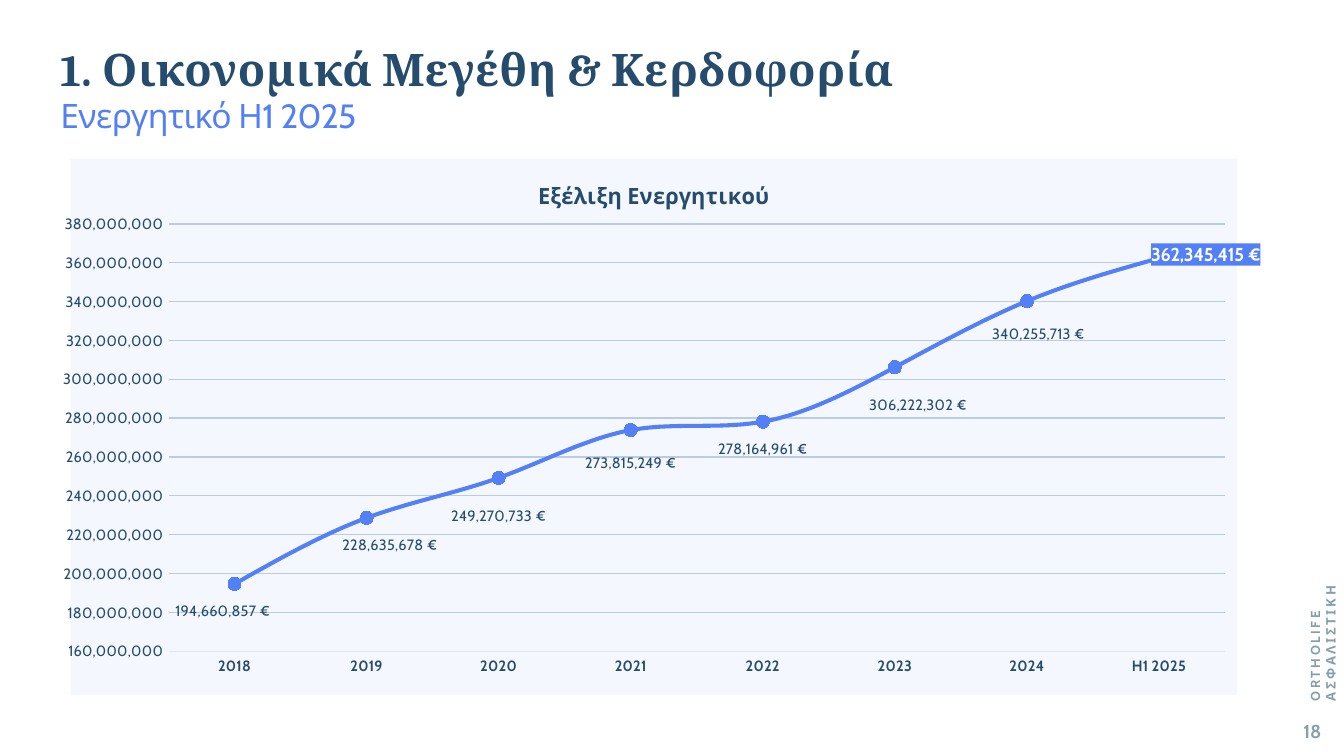
from pptx import Presentation
from pptx.chart.data import CategoryChartData
from pptx.dml.color import RGBColor
from pptx.enum.chart import XL_CHART_TYPE, XL_LABEL_POSITION, XL_MARKER_STYLE, XL_TICK_MARK
from pptx.enum.text import MSO_ANCHOR, MSO_AUTO_SIZE, PP_ALIGN
from pptx.oxml import parse_xml
from pptx.oxml.ns import nsdecls, qn
from pptx.util import Inches, Pt

COLORS = {
    "navy": "254C6D",
    "blue": "5480F7",
    "gray": "849EAA",
    "panel": "F4F7FE",
    "grid": "B9CCE4",
    "axis": "E0E7EA",
    "white": "FFFFFF",
}
BODY_FONT = "Cabin"
TITLE_FONT = "Cambria"
EURO_FORMAT = '#,##0\\ "€"'
ASSETS = {
    "2018": 194660857,
    "2019": 228635678,
    "2020": 249270733,
    "2021": 273815249,
    "2022": 278164961,
    "2023": 306222302,
    "2024": 340255713,
    "H1 2025": 362345415,
}
LABEL_OFFSETS = [
    (-0.01, 0.01), (0.02, 0.01), (0, 0.03), (0, 0.02),
    (0, 0.01), (0.02, 0.03), (0.01, 0.02), (0.04, -0.05),
]


def color(name):
    return RGBColor.from_string(COLORS[name])


def style_font(font, size, color_name, bold=False, name=BODY_FONT):
    font.name = name
    font.size = Pt(size)
    font.bold = bold
    font.color.rgb = color(color_name)


def add_run(paragraph, text, size, color_name, bold=False, name=BODY_FONT, spacing=0):
    run = paragraph.add_run()
    run.text = text
    style_font(run.font, size, color_name, bold, name)
    if spacing:
        run._r.get_or_add_rPr().set("spc", str(round(spacing * 100)))


def place(shape, box):
    shape.left, shape.top, shape.width, shape.height = (Inches(value) for value in box)


def fill_xml(color_name):
    return parse_xml(
        f'<c:spPr {nsdecls("c", "a")}><a:solidFill><a:srgbClr val="{COLORS[color_name]}"/>'
        "</a:solidFill><a:ln><a:noFill/></a:ln></c:spPr>"
    )


def layout_xml(**values):
    parts = "".join(f'<c:{tag} val="{value}"/>' for tag, value in values.items())
    return parse_xml(
        f'<c:layout {nsdecls("c")}><c:manualLayout>{parts}</c:manualLayout></c:layout>'
    )


def remove_children(element, tag):
    for child in element.findall(qn(tag)):
        element.remove(child)


def add_heading(slide, box):
    title = slide.shapes.title
    place(title, box)
    frame = title.text_frame
    frame.auto_size = MSO_AUTO_SIZE.NONE
    frame.word_wrap = True
    frame.vertical_anchor = MSO_ANCHOR.TOP
    frame.margin_left = frame.margin_right = Inches(0.1)
    frame.margin_top = frame.margin_bottom = Inches(0.1)
    paragraph = frame.paragraphs[0]
    paragraph.alignment = PP_ALIGN.LEFT
    add_run(paragraph, "1. Οικονομικά Μεγέθη & Κερδοφορία", 24, "navy", True, TITLE_FONT, 0.2)
    paragraph.add_line_break()
    add_run(paragraph, "Ενεργητικό Η1 2025", 18, "blue", spacing=-0.3)


def add_footer_text(slide, box, text, size, alignment, spacing=0, rotation=0):
    shape = slide.shapes.add_textbox(*(Inches(value) for value in box))
    shape.rotation = rotation
    shape.text_frame.word_wrap = True
    paragraph = shape.text_frame.paragraphs[0]
    paragraph.alignment = alignment
    add_run(paragraph, text, size, "gray", True, spacing=spacing)


def format_axes(chart):
    categories = chart.category_axis
    categories.major_tick_mark = XL_TICK_MARK.NONE
    categories.format.line.color.rgb = color("axis")
    categories.format.line.width = Pt(0.75)
    style_font(categories.tick_labels.font, 8, "navy", True)
    values = chart.value_axis
    values.minimum_scale = 160000000
    values.maximum_scale = 380000000
    values.major_unit = 20000000
    values.major_tick_mark = XL_TICK_MARK.NONE
    values.format.line.fill.background()
    gridline = values.major_gridlines.format.line
    gridline.color.rgb = color("grid")
    gridline.width = Pt(0.75)
    values.tick_labels.number_format = "#,##0"
    values.tick_labels.number_format_is_linked = False
    style_font(values.tick_labels.font, 8, "navy")


def format_labels(series):
    labels = series.data_labels
    labels.show_value = True
    labels.position = XL_LABEL_POSITION.BELOW
    labels.number_format = EURO_FORMAT
    labels.number_format_is_linked = False
    style_font(labels.font, 8, "navy")
    for leader_lines in labels._element.findall(qn("c:showLeaderLines")):
        leader_lines.set("val", "0")
    last = len(LABEL_OFFSETS) - 1
    for index in range(len(LABEL_OFFSETS)):
        label = series.points[index].data_label
        label.position = XL_LABEL_POSITION.BELOW
        if index == last:
            style_font(label.font, 10, "white", True)
        else:
            style_font(label.font, 8, "navy")
    elements = labels._element.findall(qn("c:dLbl"))
    for element, (x, y) in zip(elements, LABEL_OFFSETS):
        number_format = parse_xml(f'<c:numFmt {nsdecls("c")} sourceLinked="0"/>')
        number_format.set("formatCode", EURO_FORMAT)
        element.find(qn("c:idx")).addnext(number_format)
        number_format.addprevious(layout_xml(x=x, y=y))
    remove_children(elements[last], "c:spPr")
    elements[last].find(qn("c:numFmt")).addnext(fill_xml("blue"))


def add_assets_chart(slide, box):
    data = CategoryChartData(number_format="#,##0")
    data.categories = list(ASSETS)
    data.add_series("Series 1", list(ASSETS.values()))
    chart = slide.shapes.add_chart(
        XL_CHART_TYPE.LINE_MARKERS_STACKED, *(Inches(value) for value in box), data
    ).chart
    style_font(chart.font, 8, "navy")
    chart.has_legend = False
    chart.has_title = True
    add_run(chart.chart_title.text_frame.paragraphs[0], "Εξέλιξη Ενεργητικού", 12, "navy", True)
    format_axes(chart)

    plot = chart.plots[0]
    plot.vary_by_categories = False
    series = plot.series[0]
    series.smooth = True
    series.format.line.color.rgb = color("blue")
    series.format.line.width = Pt(2.25)
    series.marker.style = XL_MARKER_STYLE.CIRCLE
    series.marker.size = 7
    series.marker.format.fill.solid()
    series.marker.format.fill.fore_color.rgb = color("blue")
    series.marker.format.line.color.rgb = color("blue")
    format_labels(series)

    chart_space = chart._chartSpace
    chart_space.find(qn("c:txPr")).addprevious(fill_xml("panel"))
    plot_area = chart_space.chart.plotArea
    remove_children(plot_area, "c:layout")
    plot_area.insert(0, layout_xml(
        layoutTarget="inner", xMode="edge", yMode="edge", x=0.084, y=0.122, w=0.906, h=0.797
    ))


def main():
    presentation = Presentation()
    presentation.slide_width = Inches(10)
    presentation.slide_height = Inches(10) * 9 // 16
    slide = presentation.slides.add_slide(presentation.slide_layouts[5])
    add_heading(slide, (0.35, 0.21, 9.06, 0.71))
    add_footer_text(slide, (9.41, 5.31, 0.52, 0.27), "18", 10, PP_ALIGN.RIGHT)
    add_footer_text(
        slide, (8.93, 4.35, 1.71, 0.22), "ORTHOLIFE ΑΣΦΑΛΙΣΤΙΚΗ", 7, PP_ALIGN.LEFT, 1.4, 270
    )
    add_assets_chart(slide, (0.47, 1.18, 8.92, 3.99))
    presentation.save("out.pptx")


if __name__ == "__main__":
    main()
